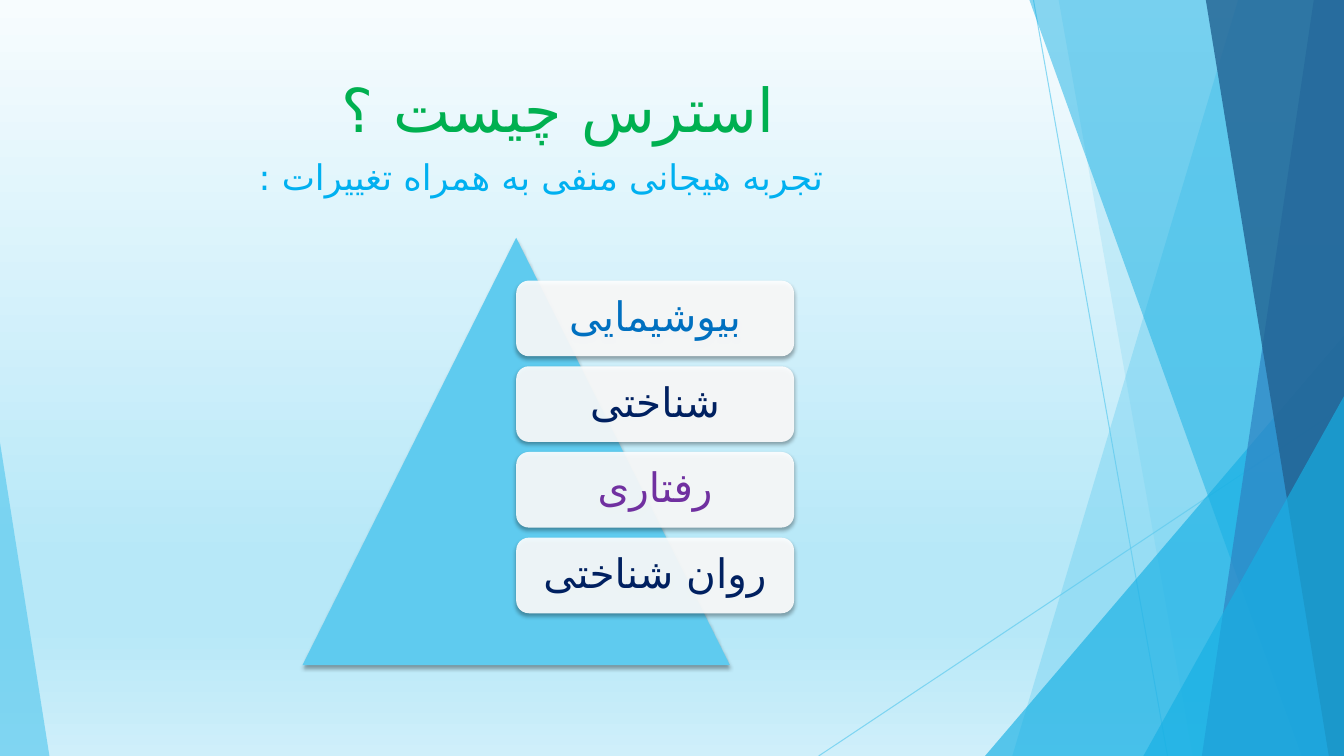
from lxml import etree
from pptx import Presentation
from pptx import util as u
from pptx.dml.color import RGBColor
from pptx.enum import shapes, text
from pptx.oxml import ns

COLORS = {
    "sky": "5FCBEF", "cyan": "17B0E4", "blue": "2E83C3", "navy": "226292",
    "white": "FFFFFF", "black": "000000", "green": "00B050", "azure": "00B0F0",
    "label_blue": "0070C0", "label_navy": "002060", "label_purple": "7030A0",
}
BACKGROUND_STOPS = [(0, "F7FCFE"), (74, "B7E8F8"), (83, "B7E8F8"), (100, "CFEFFA")]
FONT = "Cabin"
PERSIAN_FONT = "DejaVu Sans"
WIDTH, HEIGHT = 13.33, 7.5
TRIANGLE = shapes.MSO_SHAPE.ISOSCELES_TRIANGLE


def add_element(parent, tag, **attributes):
    element = etree.SubElement(parent, ns.qn(tag))
    for name, value in attributes.items():
        element.set(name, str(value))
    return element


def set_color(fill, color, alpha=100):
    fill.solid()
    fill.fore_color.rgb = RGBColor.from_string(COLORS[color])
    if alpha < 100:
        add_element(fill._xPr.find(".//" + ns.qn("a:srgbClr")), "a:alpha", val=alpha * 1000)


def style_shape(shape, color, alpha=100, shadow=False):
    set_color(shape.fill, color, alpha)
    shape.line.fill.background()
    shape.shadow.inherit = False
    if shadow:
        effects = shape._element.spPr.find(ns.qn("a:effectLst"))
        outer = add_element(effects, "a:outerShdw", blurRad=u.Pt(3), dist=u.Pt(2),
                            dir=5400000, algn="ctr", rotWithShape=0)
        shade = add_element(outer, "a:srgbClr", val=COLORS["black"])
        add_element(shade, "a:alpha", val=35000)


def add_preset(slide, kind, box, color, adjustment=None, **style):
    shape = slide.shapes.add_shape(kind, *map(u.Inches, box))
    if adjustment is not None:
        shape.adjustments[0] = adjustment
    style_shape(shape, color, **style)
    return shape


def add_polygon(slide, points, color, alpha):
    corners = [(u.Inches(x), u.Inches(y)) for x, y in points]
    builder = slide.shapes.build_freeform(*corners[0])
    builder.add_line_segments(corners[1:], close=True)
    style_shape(builder.convert_to_shape(), color, alpha)


def add_line(slide, start, end):
    line = slide.shapes.add_connector(shapes.MSO_CONNECTOR.STRAIGHT,
                                      *map(u.Inches, start + end))
    line.line.width = u.Pt(0.75)
    set_color(line.line.fill, "sky", 70)
    add_element(line._element.spPr, "a:effectLst")


def write_text(para, words, size, color):
    para.alignment = text.PP_ALIGN.CENTER
    para._p.get_or_add_pPr().set("rtl", "1")
    span = para.add_run()
    span.text = words
    span.font.name = FONT
    span.font.size = u.Pt(size)
    span.font.color.rgb = RGBColor.from_string(COLORS[color])
    add_element(span._r.get_or_add_rPr(), "a:cs", typeface=PERSIAN_FONT)


def paint_background(slide):
    fill = slide.background.fill
    fill.gradient()
    fill.gradient_angle = 270
    stops = fill._xPr.find(".//" + ns.qn("a:gsLst"))
    for stop in list(stops):
        stops.remove(stop)
    for position, color in BACKGROUND_STOPS:
        stop = add_element(stops, "a:gs", pos=position * 1000)
        add_element(stop, "a:srgbClr", val=color)


def draw_facets(slide, box):
    left, top, width, height = box
    right, bottom = left + width, top + height

    def add_band(top_x, bottom_x, color, alpha):
        add_polygon(slide, [(top_x, top), (right, top), (right, bottom), (bottom_x, bottom)],
                    color, alpha)

    def add_corner(corner_width, corner_height, color="cyan", alpha=66, at_right=True):
        x = right - corner_width if at_right else left
        add_preset(slide, TRIANGLE, (x, bottom - corner_height, corner_width, corner_height),
                   color, adjustment=int(at_right), alpha=alpha)

    add_line(slide, (10.25, top), (11.58, bottom))
    add_line(slide, (right, 4.03), (8.12, bottom))
    add_band(12.28, 10.04, "sky", 36)
    add_band(10.5, 11.83, "sky", 20)
    add_corner(3.56, 4.17)
    add_band(10.21, 12.91, "cyan", 50)
    add_band(13.03, 11.92, "blue", 70)
    add_band(11.96, 13.18, "navy", 80)
    add_corner(1.99, 3.57)
    add_corner(0.49, 3.11, color="sky", alpha=70, at_right=False)


def add_title(slide, box):
    frame = slide.shapes.add_textbox(*map(u.Inches, box)).text_frame
    frame.word_wrap = True
    frame.vertical_anchor = text.MSO_ANCHOR.TOP
    para = frame.paragraphs[0]
    write_text(para, "استرس چیست ؟ ", size=43.2, color="green")
    para.add_line_break()
    write_text(para, " ", size=32.4, color="sky")
    write_text(para, "تجربه هیجانی منفی به همراه تغییرات :", size=25.2, color="azure")


def add_pyramid(slide, box, labels):
    left, top, width, height = box
    add_preset(slide, TRIANGLE, box, "sky", shadow=True)
    card_width, card_height, gap = width * 0.65, 0.75, 0.1
    for index, (words, color) in enumerate(labels):
        card_top = top + height / 10 + index * (card_height + gap)
        card = add_preset(slide, shapes.MSO_SHAPE.ROUNDED_RECTANGLE,
                          (left + width / 2, card_top, card_width, card_height),
                          "white", alpha=90, shadow=True)
        frame = card.text_frame
        frame.word_wrap = True
        frame.vertical_anchor = text.MSO_ANCHOR.MIDDLE
        frame.margin_left = frame.margin_right = u.Inches(0.12)
        frame.margin_top = frame.margin_bottom = u.Inches(0.12)
        frame.paragraphs[0].line_spacing = 0.9
        write_text(frame.paragraphs[0], words, size=29, color=color)


def main():
    deck = Presentation()
    deck.slide_width, deck.slide_height = u.Inches(WIDTH), u.Inches(HEIGHT)
    page = deck.slides.add_slide(deck.slide_layouts[6])
    paint_background(page)
    draw_facets(page, (0, 0, WIDTH, HEIGHT))
    add_title(page, (0.74, 0.67, 9.4, 1.44))
    add_pyramid(page, (3, 2.36, 4.24, 4.24), [
        ("بیوشیمایی", "label_blue"),
        ("شناختی", "label_navy"),
        ("رفتاری", "label_purple"),
        ("روان شناختی", "label_navy"),
    ])
    deck.save("out.pptx")


if __name__ == "__main__":
    main()
